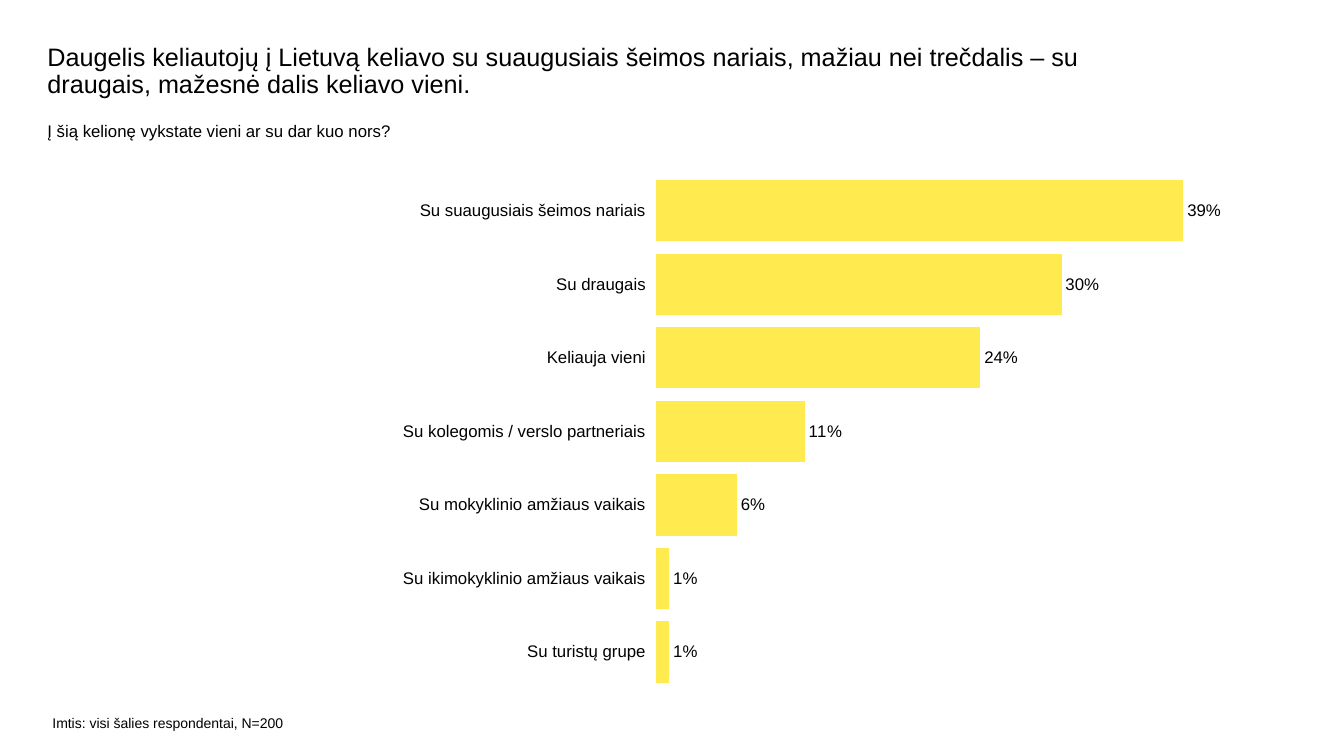
from dataclasses import dataclass

from lxml import etree
from pptx import Presentation
from pptx.chart.data import CategoryChartData
from pptx.dml.color import RGBColor
from pptx.enum.chart import XL_CHART_TYPE, XL_LABEL_POSITION, XL_TICK_LABEL_POSITION, XL_TICK_MARK
from pptx.enum.text import MSO_ANCHOR, MSO_AUTO_SIZE, PP_ALIGN
from pptx.oxml.ns import qn
from pptx.util import Inches, Pt

BAR_CLUSTERED = XL_CHART_TYPE.BAR_CLUSTERED
OUTSIDE_END = XL_LABEL_POSITION.OUTSIDE_END
LABELS_LOW = XL_TICK_LABEL_POSITION.LOW
NO_TICK = XL_TICK_MARK.NONE
TOP = MSO_ANCHOR.TOP
NO_AUTO_SIZE = MSO_AUTO_SIZE.NONE
LEFT = PP_ALIGN.LEFT

SLIDE_WIDTH, SLIDE_HEIGHT = 13.33, 7.5


@dataclass(frozen=True)
class Theme:
    font: str = "Arial"
    text: RGBColor = RGBColor(0, 0, 0)
    bar: RGBColor = RGBColor(0xFF, 0xEB, 0x50)
    title_size: int = 18
    body_size: int = 12
    note_size: int = 10


@dataclass(frozen=True)
class Area:
    """A region in inches, resolved against the slide's size."""
    left: float
    top: float
    width: float
    height: float

    def shares(self) -> tuple:
        return (self.left / SLIDE_WIDTH, self.top / SLIDE_HEIGHT,
                self.width / SLIDE_WIDTH, self.height / SLIDE_HEIGHT)

    def lengths(self) -> tuple:
        x, y, w, h = self.shares()
        return (Inches(x * SLIDE_WIDTH), Inches(y * SLIDE_HEIGHT),
                Inches(w * SLIDE_WIDTH), Inches(h * SLIDE_HEIGHT))


@dataclass(frozen=True)
class Caption:
    text: str
    area: Area
    size: int
    line_spacing: float = 1.0


THEME = Theme()

TITLE = Caption(
    "Daugelis keliautojų į Lietuvą keliavo su suaugusiais šeimos nariais, "
    "mažiau nei trečdalis – su draugais, mažesnė dalis keliavo vieni.",
    Area(0.47, 0.44, 11.25, 0.6), THEME.title_size, 0.9)
CAPTIONS = (
    Caption("Į šią kelionę vykstate vieni ar su dar kuo nors?",
            Area(0.47, 1.2, 11.89, 0.61), THEME.body_size),
    Caption("Imtis: visi šalies respondentai, N=200",
            Area(0.52, 7.09, 2.53, 0.24), THEME.note_size),
)

CHART_AREA = Area(3.84, 1.62, 8.88, 5.32)
PLOT_SHARES = {"x": 0.3, "y": 0.02, "w": 0.68, "h": 0.96}
AXIS_MAXIMUM = 0.45
COMPANIONS = {
    "Su suaugusiais šeimos nariais": 0.39,
    "Su draugais": 0.3,
    "Keliauja vieni": 0.24,
    "Su kolegomis / verslo partneriais": 0.11,
    "Su mokyklinio amžiaus vaikais": 0.06,
    "Su ikimokyklinio amžiaus vaikais": 0.01,
    "Su turistų grupe": 0.01,
}


def style_font(font, size: int) -> None:
    font.name = THEME.font
    font.size = Pt(size)
    font.bold = False
    font.color.rgb = THEME.text


def write_caption(box, caption: Caption) -> None:
    box.left, box.top, box.width, box.height = caption.area.lengths()
    frame = box.text_frame
    frame.word_wrap = True
    frame.auto_size = NO_AUTO_SIZE
    frame.vertical_anchor = TOP
    frame.margin_left = frame.margin_top = frame.margin_right = frame.margin_bottom = 0
    para = frame.paragraphs[0]
    para.alignment = LEFT
    para.line_spacing = caption.line_spacing
    para.space_before = Pt(0)
    span = para.add_run()
    span.text = caption.text
    style_font(span.font, caption.size)


def place_plot(chart) -> None:
    """Fix the inner plot area as shares of the chart."""
    plot_area = chart.plots[0]._element.getparent()
    for old_layout in plot_area.findall(qn("c:layout")):
        plot_area.remove(old_layout)
    layout = etree.Element(qn("c:layout"))
    plot_area.insert(0, layout)
    manual = etree.SubElement(layout, qn("c:manualLayout"))
    settings = {"layoutTarget": "inner", "xMode": "edge", "yMode": "edge", **PLOT_SHARES}
    for name, value in settings.items():
        etree.SubElement(manual, qn(f"c:{name}")).set("val", str(value))


def add_companion_chart(page) -> None:
    data = CategoryChartData(number_format="0%")
    data.categories = list(COMPANIONS)
    data.add_series("Series 1", list(COMPANIONS.values()))
    chart = page.shapes.add_chart(BAR_CLUSTERED, *CHART_AREA.lengths(), data).chart
    chart.has_legend = False
    chart.has_title = False
    style_font(chart.font, THEME.note_size)

    # Axes
    categories = chart.category_axis
    categories.reverse_order = True
    categories.major_tick_mark = categories.minor_tick_mark = NO_TICK
    categories.tick_label_position = LABELS_LOW
    categories.format.line.fill.background()
    style_font(categories.tick_labels.font, THEME.body_size)
    values = chart.value_axis
    values.minimum_scale, values.maximum_scale = 0, AXIS_MAXIMUM
    values.has_major_gridlines = False
    values.visible = False

    # Bars and their labels
    plot = chart.plots[0]
    plot.gap_width = 20
    plot.vary_by_categories = False
    bars = plot.series[0]
    bars.format.fill.solid()
    bars.format.fill.fore_color.rgb = THEME.bar
    labels = bars.data_labels
    labels.show_value = True
    labels.number_format = "0%"
    labels.number_format_is_linked = False
    labels.position = OUTSIDE_END
    style_font(labels.font, THEME.body_size)
    place_plot(chart)


def main() -> None:
    deck = Presentation()
    deck.slide_width, deck.slide_height = Inches(SLIDE_WIDTH), Inches(SLIDE_HEIGHT)
    page = deck.slides.add_slide(deck.slide_layouts.get_by_name("Title Only"))

    # Title, question and sample note
    write_caption(page.shapes.title, TITLE)
    for caption in CAPTIONS:
        write_caption(page.shapes.add_textbox(*caption.area.lengths()), caption)

    # Travel companions
    add_companion_chart(page)
    deck.save("out.pptx")


if __name__ == "__main__":
    main()
